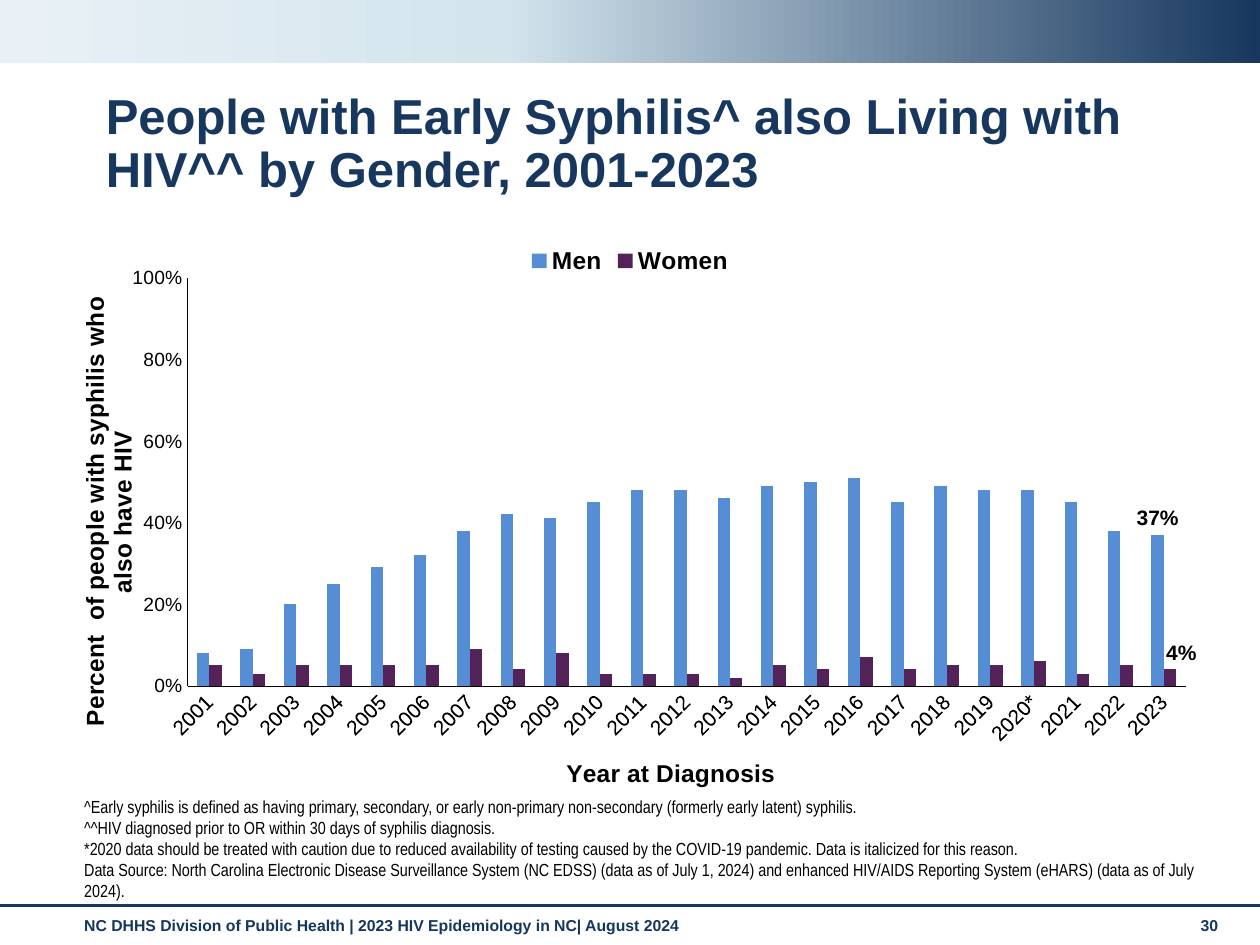
from lxml import etree
from pptx import Presentation
from pptx.chart.data import CategoryChartData
from pptx.dml.color import RGBColor
from pptx.enum.chart import XL_CHART_TYPE as ChartType
from pptx.enum.chart import XL_LABEL_POSITION as LabelPosition
from pptx.enum.chart import XL_LEGEND_POSITION as LegendPosition
from pptx.enum.chart import XL_TICK_MARK as TickMark
from pptx.enum.shapes import MSO_CONNECTOR as Connector
from pptx.enum.shapes import MSO_SHAPE as Shape
from pptx.enum.text import MSO_ANCHOR as Anchor
from pptx.enum.text import MSO_AUTO_SIZE as AutoSize
from pptx.enum.text import PP_ALIGN as Align
from pptx.oxml import parse_xml
from pptx.oxml.ns import nsdecls, qn
from pptx.util import Inches, Pt

NAVY = RGBColor(0x17, 0x37, 0x5E)
FOOTER_NAVY = RGBColor(0x15, 0x36, 0x5E)
BLACK = RGBColor(0, 0, 0)
MEN_BLUE = RGBColor(0x55, 0x8E, 0xD5)
WOMEN_PURPLE = RGBColor(0x52, 0x22, 0x58)
BANNER_STOPS = ((0, NAVY), (60, RGBColor(0xD3, 0xE4, 0xED)),
                (100, RGBColor(0xE9, 0xF1, 0xF6)))

WIDTH, HEIGHT = 10, 7.5
LEFT = 0.57
FOOTER_TOP = 7.22

TITLE = "People with Early Syphilis^ also Living with HIV^^ by Gender, 2001-2023"
FOOTER = "NC DHHS Division of Public Health | 2023 HIV Epidemiology in NC| August 2024"
NOTES = (
    "^Early syphilis is defined as having primary, secondary, or early non-primary "
    "non-secondary (formerly early latent) syphilis.",
    "^^HIV diagnosed prior to OR within 30 days of syphilis diagnosis.",
    "*2020 data should be treated with caution due to reduced availability of testing "
    "caused by the COVID-19 pandemic. Data is italicized for this reason.",
    "Data Source: North Carolina Electronic Disease Surveillance System (NC EDSS) (data as "
    "of July 1, 2024) and enhanced HIV/AIDS Reporting System (eHARS) (data as of July 2024).",
)
YEARS = ["2020*" if year == 2020 else str(year) for year in range(2001, 2024)]
MEN = (8, 9, 20, 25, 29, 32, 38, 42, 41, 45, 48, 48,
       46, 49, 50, 51, 45, 49, 48, 48, 45, 38, 37)
WOMEN = (5, 3, 5, 5, 5, 5, 9, 4, 8, 3, 3, 3,
         2, 5, 4, 7, 4, 5, 5, 6, 3, 5, 4)


def style_font(font, size, color=BLACK, bold=False, name="Arial"):
    font.name, font.size, font.bold = name, Pt(size), bold
    font.color.rgb = color


def add_text(slide, box, lines, anchor=Anchor.TOP, **style):
    shape = slide.shapes.add_textbox(*map(Inches, box))
    frame = shape.text_frame
    frame.word_wrap, frame.vertical_anchor = True, anchor
    frame.text = "\n".join(lines)
    for paragraph in frame.paragraphs:
        style_font(paragraph.font, **style)


def add_banner(slide):
    shape = slide.shapes.add_shape(Shape.RECTANGLE, 0, 0, Inches(WIDTH), Inches(0.5))
    shape.shadow.inherit = False
    shape.line.fill.background()
    shape.fill.gradient()
    shape.fill.gradient_angle = 180
    stops = "".join(
        f'<a:gs pos="{share * 1000}"><a:srgbClr val="{color}"/></a:gs>'
        for share, color in BANNER_STOPS)
    old_stops = next(shape._element.iter(qn("a:gsLst")))
    new_stops = parse_xml(f'<a:gsLst {nsdecls("a")}>{stops}</a:gsLst>')
    old_stops.getparent().replace(old_stops, new_stops)


def add_footer(slide):
    y = Inches(7.19)
    rule = slide.shapes.add_connector(Connector.STRAIGHT, 0, y, Inches(WIDTH), y)
    rule.line.color.rgb, rule.line.width = NAVY, Pt(1.75)
    etree.SubElement(rule._element.spPr, qn("a:effectLst"))
    style = dict(size=9, color=FOOTER_NAVY, bold=True)
    add_text(slide, (LEFT, FOOTER_TOP, 8.74, 0.29), [FOOTER], **style)
    add_text(slide, (9.43, FOOTER_TOP, 0.44, 0.3), ["30"], **style)


def set_title(slide):
    title = slide.shapes.title
    title.left, title.top, title.width, title.height = map(Inches, (0.74, 0.68, 9.13, 0.6))
    frame = title.text_frame
    frame.text = TITLE
    frame.word_wrap, frame.auto_size, frame.vertical_anchor = True, AutoSize.NONE, Anchor.TOP
    paragraph = frame.paragraphs[0]
    paragraph.alignment, paragraph.line_spacing = Align.LEFT, 0.9
    style_font(paragraph.font, 28, NAVY, bold=True)


def set_layout(element, index, x, y, size=None, edge=True):
    """Place a chart part by shares of the chart; edge=False shifts it instead."""
    for old in element.findall(qn("c:layout")):
        element.remove(old)
    values = []
    if size:
        values.append(("layoutTarget", "inner"))
    if edge:
        values += [("xMode", "edge"), ("yMode", "edge")]
    values += [("x", x), ("y", y)]
    if size:
        values += [("w", size[0]), ("h", size[1])]
    parts = "".join(f'<c:{tag} val="{value}"/>' for tag, value in values)
    element.insert(index, parse_xml(
        f'<c:layout {nsdecls("c")}><c:manualLayout>{parts}</c:manualLayout></c:layout>'))


def style_axis(axis, title, label_size, title_x, title_y):
    axis.has_major_gridlines = False
    axis.major_tick_mark = axis.minor_tick_mark = TickMark.NONE
    axis.format.line.color.rgb, axis.format.line.width = BLACK, Pt(0.25)
    style_font(axis.tick_labels.font, label_size)
    axis.axis_title.text_frame.text = title
    style_font(axis.axis_title.text_frame.paragraphs[0].font, 14, bold=True)
    set_layout(axis.axis_title._element, 1, title_x, title_y)


def style_series(series, color):
    """Colour the columns and label only the latest year."""
    series.format.fill.solid()
    series.format.fill.fore_color.rgb = color
    series.data_labels.show_value = False
    label = series.points[len(YEARS) - 1].data_label
    style_font(label.font, 12, bold=True)
    label.position = LabelPosition.OUTSIDE_END


def add_column_chart(slide):
    data = CategoryChartData(number_format="0%")
    data.categories = YEARS
    for name, percents in (("Men", MEN), ("Women", WOMEN)):
        data.add_series(name, [percent / 100 for percent in percents])
    chart = slide.shapes.add_chart(
        ChartType.COLUMN_CLUSTERED, *map(Inches, (0.5, 1.85, 9, 4.46)), data).chart
    style_font(chart.font, 12, bold=True)
    chart.has_title = False
    chart.has_legend = True
    chart.legend.position, chart.legend.include_in_layout = LegendPosition.TOP, False
    style_font(chart.legend.font, 14, bold=True)

    plot = chart.plots[0]
    plot.gap_width, plot.overlap, plot.vary_by_categories = 150, 0, False
    for series, color in zip(plot.series, (MEN_BLUE, WOMEN_PURPLE)):
        style_series(series, color)
    women_label = next(plot.series[1]._element.iter(qn("c:dLbl")))
    set_layout(women_label, 1, 0.01, 0, edge=False)

    style_axis(chart.category_axis, "Year at Diagnosis", 12, 0.44, 0.93)
    value_axis = chart.value_axis
    style_axis(value_axis, "Percent  of people with syphilis who also have HIV", 11, 0.01, 0.11)
    value_axis.minimum_scale, value_axis.maximum_scale, value_axis.major_unit = 0, 1, 0.2
    value_axis.tick_labels.number_format = "0%"
    value_axis.tick_labels.number_format_is_linked = False
    plot_area = next(chart._chartSpace.iter(qn("c:plotArea")))
    set_layout(plot_area, 0, 0.11, 0.08, size=(0.88, 0.73))


def main():
    presentation = Presentation()
    presentation.slide_width, presentation.slide_height = Inches(WIDTH), Inches(HEIGHT)
    slide = presentation.slides.add_slide(presentation.slide_layouts[5])
    add_banner(slide)
    add_footer(slide)
    set_title(slide)
    add_text(slide, (LEFT, 6.99, 9.29, 0.21), NOTES, Anchor.BOTTOM,
             size=10, name="Arial Narrow")
    add_column_chart(slide)
    presentation.save("out.pptx")


if __name__ == "__main__":
    main()
